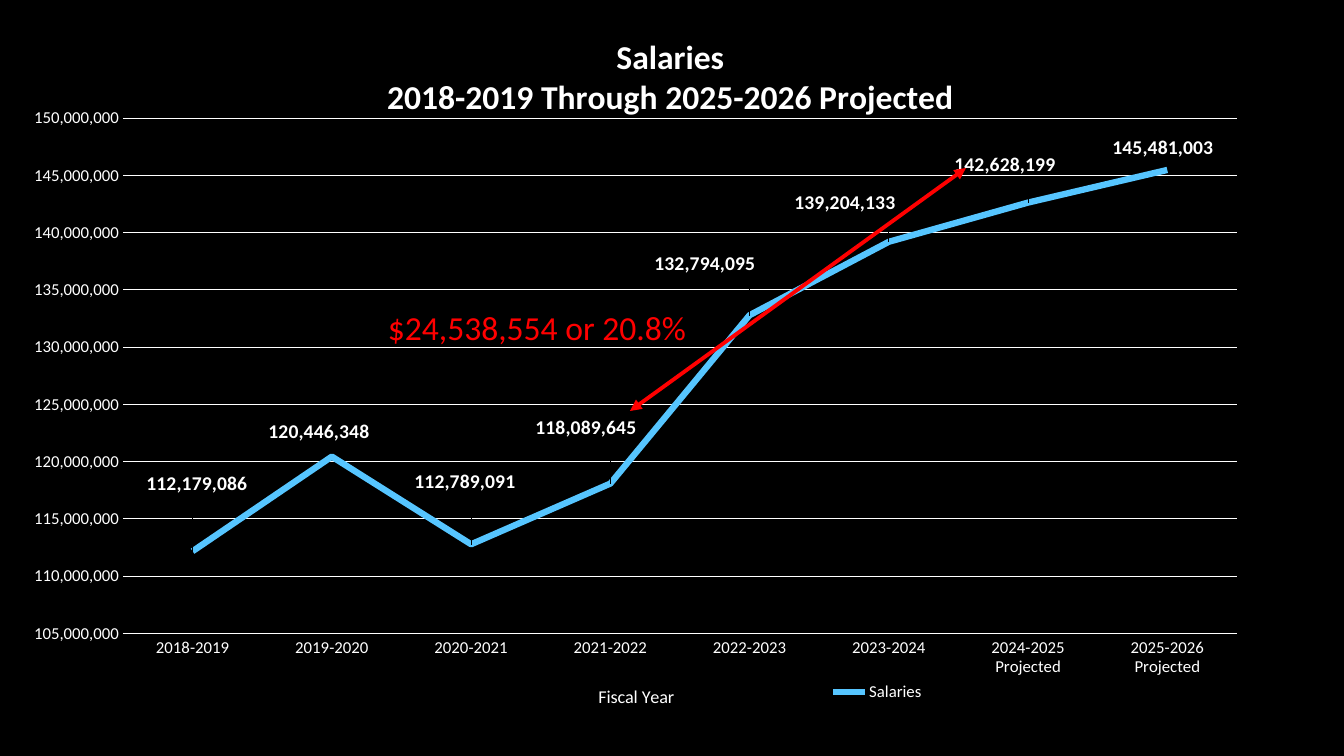
import pptx
import pptx.chart.data
import pptx.dml.color
import pptx.enum.chart
import pptx.enum.shapes
import pptx.oxml
import pptx.oxml.ns
import pptx.util

# Content
TITLE = ["Salaries", "2018-2019 Through 2025-2026 Projected"]
AXIS_TITLE = ["Fiscal Year"]
CALLOUT = ["$24,538,554 or 20.8%"]
SERIES = "Salaries"
# year, salaries, centre of its label in px
YEARS = [
    ("2018-2019", 112179086, (197, 487)),
    ("2019-2020", 120446348, (319, 435)),
    ("2020-2021", 112789091, (465, 485)),
    ("2021-2022", 118089645, (586, 431)),
    ("2022-2023", 132794095, (705, 266)),
    ("2023-2024", 139204133, (845, 204)),
    ("2024-2025 Projected", 142628199, (1005, 166)),
    ("2025-2026 Projected", 145481003, (1163, 149)),
]
LOW, HIGH, STEP = 105000000, 150000000, 5000000
NUMBERS = "#,##0"
FONT, WHITE, BLACK, RED, BLUE = "Calibri", "FFFFFF", "000000", "FF0000", "56C5FF"

# Places in px: left, top, width, height
CHART = (16, 8, 1308, 706)
PLOT = (123, 119, 1114, 519)
TITLE_AT, AXIS_TITLE_AT, LEGEND_AT = (384, 33), (595, 686), (828, 683)
CALLOUT_BOX = (378, 302, 320, 50)
ARROW = (630, 411, 966, 168)
LABEL_RISE = 16  # from a point up to the centre of a label above it


def px(n):
    return round(n * 914400 / 100.8)


def color(value):
    return pptx.dml.color.RGBColor.from_string(value)


def style(font, size=12, fill=WHITE, bold=False):
    font.name, font.size, font.bold = FONT, pptx.util.Pt(size), bold
    font.color.rgb = color(fill)


def write(tf, lines, **fmt):
    for i, line in enumerate(lines):
        p = tf.add_paragraph() if i else tf.paragraphs[0]
        r = p.add_run()
        r.text = line
        style(r.font, **fmt)


def draw_line(line, fill, width):
    line.color.rgb = color(fill)
    line.width = pptx.util.Pt(width)


def element(xml):
    tag, rest = xml[1:].split(" ", 1) if " " in xml.split(">")[0] else xml[1:].split(">", 1)
    joint = " " if " " in xml.split(">")[0] else ">"
    return pptx.oxml.parse_xml(f"<{tag} {pptx.oxml.ns.nsdecls('a', 'c')}{joint}{rest}")


def place(parent, index, **parts):
    """Give a chart part a manual layout, in fractions of the chart."""
    for old in parent.xpath("./c:layout"):
        parent.remove(old)
    inner = "".join(f'<c:{k} val="{v if isinstance(v, str) else round(v, 5)}"/>'
                    for k, v in parts.items())
    parent.insert(index, element(
        f"<c:layout><c:manualLayout>{inner}</c:manualLayout></c:layout>"))


def at(x, y):
    return dict(xMode="edge", yMode="edge",
                x=(x - CHART[0]) / CHART[2], y=(y - CHART[1]) / CHART[3])


# Slide
prs = pptx.Presentation()
prs.slide_width, prs.slide_height = px(1344), px(756)
s = prs.slides.add_slide(prs.slide_layouts[6])
s.background.fill.solid()
s.background.fill.fore_color.rgb = color(BLACK)

# Chart
enums = pptx.enum.chart
data = pptx.chart.data.CategoryChartData(number_format=NUMBERS)
data.categories = [year for year, _, _ in YEARS]
data.add_series(SERIES, [value for _, value, _ in YEARS])
chart = s.shapes.add_chart(enums.XL_CHART_TYPE.LINE, *map(px, CHART), data).chart
style(chart.font)
write(chart.chart_title.text_frame, TITLE, size=24, bold=True)
chart.chart_title.include_in_layout = False
place(chart.chart_title._element, 1, **at(*TITLE_AT))
place(chart._chartSpace.chart.plotArea, 0, layoutTarget="inner", **at(*PLOT[:2]),
      w=PLOT[2] / CHART[2], h=PLOT[3] / CHART[3])

# Axes
years, amounts = chart.category_axis, chart.value_axis
for axis in (years, amounts):
    axis.major_tick_mark = axis.minor_tick_mark = enums.XL_TICK_MARK.NONE
    style(axis.tick_labels.font)
draw_line(years.format.line, WHITE, 0.75)
write(years.axis_title.text_frame, AXIS_TITLE, size=13)
place(years.axis_title._element, 1, **at(*AXIS_TITLE_AT))
amounts.minimum_scale, amounts.maximum_scale, amounts.major_unit = LOW, HIGH, STEP
amounts.tick_labels.number_format = NUMBERS
amounts.tick_labels.number_format_is_linked = False
amounts.format.line.fill.background()
draw_line(amounts.major_gridlines.format.line, WHITE, 0.75)

# Legend
chart.has_legend = True
chart.legend.position = enums.XL_LEGEND_POSITION.BOTTOM
chart.legend.include_in_layout = False
style(chart.legend.font)
place(chart.legend._element, 1, **at(*LEGEND_AT))

# Salary line and its labels
salaries = chart.plots[0].series[0]
salaries.smooth = False
salaries.marker.style = enums.XL_MARKER_STYLE.NONE
draw_line(salaries.format.line, BLUE, 4.5)
labels = salaries.data_labels
labels.show_value = True
labels.number_format, labels.number_format_is_linked = NUMBERS, False
style(labels.font, size=14, bold=True)
for i, (_, value, (x, y)) in enumerate(YEARS):
    label = salaries.points[i].data_label
    style(label.font, size=14, bold=True)
    label.position = enums.XL_LABEL_POSITION.ABOVE
    point_x = PLOT[0] + PLOT[2] * (i + 0.5) / len(YEARS)
    point_y = PLOT[1] + PLOT[3] * (HIGH - value) / (HIGH - LOW)
    place(labels._element.xpath("./c:dLbl")[i], 1, x=(x - point_x) / CHART[2],
          y=(y - point_y + LABEL_RISE) / CHART[3])

# Growth arrow
arrow = s.shapes.add_connector(pptx.enum.shapes.MSO_CONNECTOR.STRAIGHT, *map(px, ARROW))
draw_line(arrow.line, RED, 2.75)
for end in ("headEnd", "tailEnd"):
    arrow.line._get_or_add_ln().append(element(f'<a:{end} type="triangle"/>'))
arrow._element.spPr.append(element("<a:effectLst></a:effectLst>"))

# Growth callout
tf = s.shapes.add_textbox(*map(px, CALLOUT_BOX)).text_frame
tf.word_wrap = False
write(tf, CALLOUT, size=24, fill=RED)

prs.save("out.pptx")
